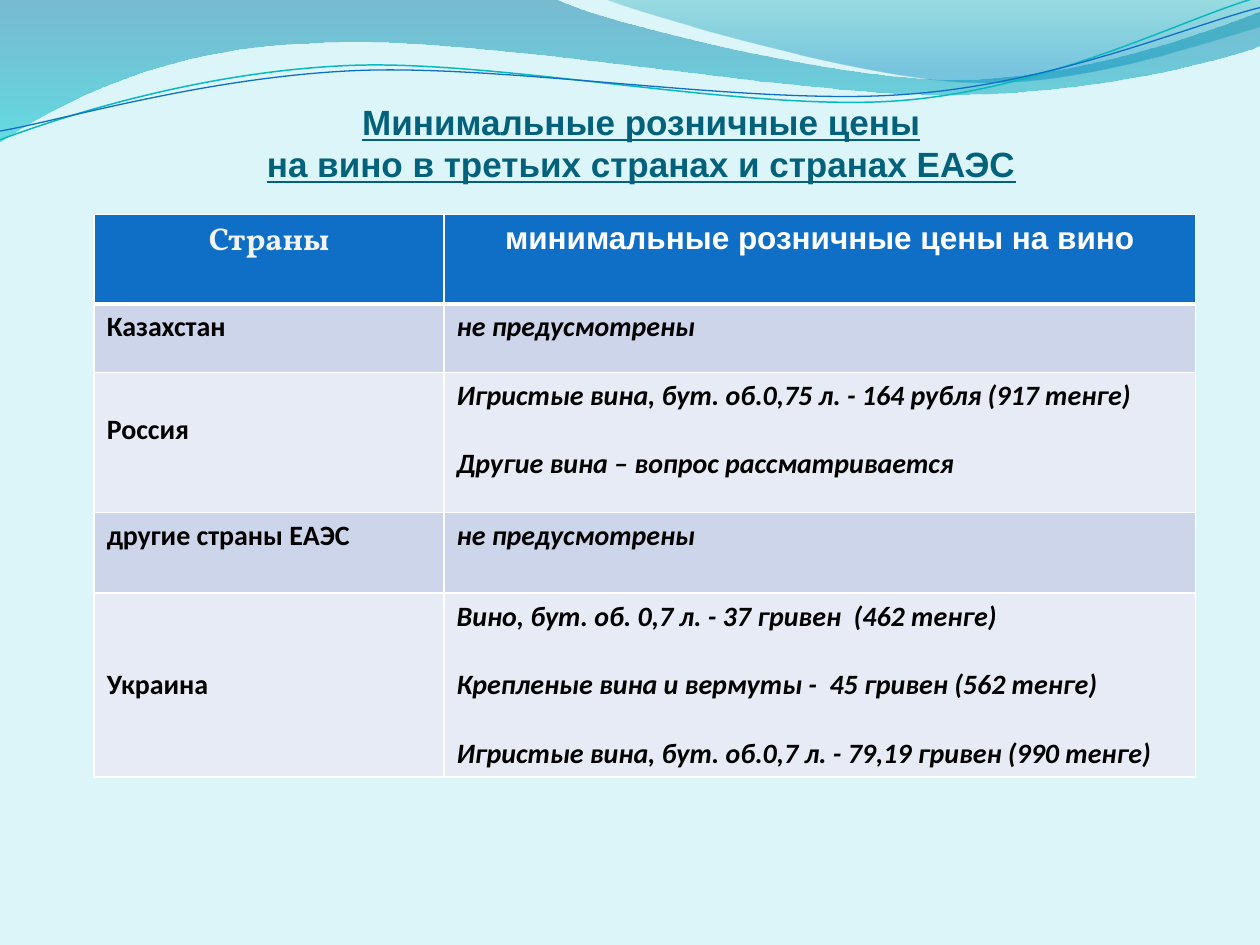
import math
import pptx
import pptx.util
import pptx.dml.color
import pptx.enum.text
import pptx.oxml
import pptx.oxml.ns
from dataclasses import dataclass

Pt = pptx.util.Pt
Align = pptx.enum.text.PP_ALIGN
Anchor = pptx.enum.text.MSO_ANCHOR
qn = pptx.oxml.ns.qn
NS = pptx.oxml.ns.nsdecls("a")


@dataclass(frozen=True)
class Theme:
    back: str = "DBF5F9"
    title: str = "04617B"
    head: str = "0F6FC6"
    bands: tuple = ("CCD5EA", "E7EBF5")
    ink: str = "000000"
    white: str = "FFFFFF"
    pale: str = "F2F2F2"
    teal: str = "0AB8BF"
    title_size: int = 20
    head_size: int = 18
    body_size: int = 16
    row_gap: float = 19.55  # one line of body text


def rgb(code):
    return pptx.dml.color.RGBColor.from_string(code)


def pairs(part):
    return list(zip(part[::2], part[1::2]))


def turn(path, mid, angle):
    """Turn every point of a path clockwise about a middle point."""
    cos, sin = math.cos(math.radians(angle)), math.sin(math.radians(angle))
    (cx, cy), out = mid, []
    for part in path:
        spots = [(x - cx, y - cy) for x, y in pairs(part)]
        out.append([num for x, y in spots
                    for num in (cx + x * cos - y * sin, cy + x * sin + y * cos)])
    return out


class Deck:
    def __init__(self, theme):
        self.theme = theme
        self.file = pptx.Presentation()
        self.file.slide_width, self.file.slide_height = Pt(720), Pt(540)
        self.slide = self.file.slides.add_slide(self.file.slide_layouts[5])
        fill = self.slide.background.fill
        fill.solid()
        fill.fore_color.rgb = rgb(theme.back)

    def shape(self, path, close):
        """Draw lines (2 numbers) and cubic curves (6 numbers)."""
        first, *rest = [(Pt(x), Pt(y)) for part in path for x, y in pairs(part)]
        pen = self.slide.shapes.build_freeform(*first, scale=1.0)
        pen.add_line_segments(rest, close=close)
        form = pen.convert_to_shape()
        form.shadow.inherit = False
        # Join each three points of a curve into one cubic segment
        legs = iter(list(form.element.iter(qn("a:lnTo"))))
        for part in path[1:]:
            group = [next(legs) for _ in pairs(part)]
            if len(group) == 3:
                curve = pptx.oxml.parse_xml(f"<a:cubicBezTo {NS}/>")
                group[0].addprevious(curve)
                for leg in group:
                    curve.append(leg[0])
                    leg.getparent().remove(leg)
        return form

    def wave(self, path, stops):
        form = self.shape(path, True)
        form.line.fill.background()
        form.fill.gradient()
        form.fill.gradient_angle = 270
        for stop, (place, tint, _) in zip(form.fill.gradient_stops, stops):
            stop.position = place
            stop.color.rgb = rgb(tint)
        tints = form.element.spPr.iter(qn("a:srgbClr"))
        for node, (_, _, alpha) in zip(tints, stops):
            node.append(pptx.oxml.parse_xml(f'<a:alpha {NS} val="{alpha * 1000}"/>'))

    def curve(self, path, mid, tint, width, tilt=2.7):
        form = self.shape(turn(path, mid, tilt), False)
        form.rotation = 360 - tilt
        form.fill.background()
        form.line.color.rgb = rgb(tint)
        form.line.width = Pt(width)

    def style(self, para, face, size, tint, slant=False):
        font = para.font
        font.name, font.size, font.bold, font.italic = face, Pt(size), True, slant
        font.color.rgb = rgb(tint)

    def title(self, text, box):
        form = self.slide.shapes.title
        form.left, form.top, form.width, form.height = map(Pt, box)
        frame = form.text_frame
        frame.word_wrap = True
        frame.auto_size = pptx.enum.text.MSO_AUTO_SIZE.NONE
        frame.vertical_anchor = Anchor.BOTTOM
        frame.margin_left = frame.margin_right = frame.margin_bottom = 0
        frame.margin_top = Pt(3.6)
        para = frame.paragraphs[0]
        para.text = text
        para.alignment = Align.CENTER
        self.style(para, "Arial", self.theme.title_size, self.theme.title)
        para.font.underline = True

    def border(self, cell, base):
        props = cell._tc.get_or_add_tcPr()
        sides = (("lnL", 1), ("lnR", 1), ("lnT", 1), ("lnB", base))
        for spot, (side, width) in enumerate(sides):
            props.insert(spot, pptx.oxml.parse_xml(
                f'<a:{side} {NS} w="{Pt(width)}"><a:solidFill>'
                f'<a:srgbClr val="{self.theme.white}"/></a:solidFill></a:{side}>'))

    def cell(self, cell, lines, fill, base=1):
        """Fill one cell and return its paragraphs."""
        cell.fill.solid()
        cell.fill.fore_color.rgb = rgb(fill)
        self.border(cell, base)
        frame = cell.text_frame
        for spot, line in enumerate(lines):
            para = frame.add_paragraph() if spot else frame.paragraphs[0]
            para.text = line
            if spot:
                para.space_before = Pt(self.theme.row_gap)
        return frame.paragraphs

    def table(self, heads, rows, spot, widths, heights):
        look = self.theme
        grid = self.slide.shapes.add_table(
            len(heights), len(widths), *map(Pt, spot),
            Pt(sum(widths)), Pt(sum(heights))).table
        for col, width in zip(grid.columns, widths):
            col.width = Pt(width)
        for row, height in zip(grid.rows, heights):
            row.height = Pt(height)
        # Header row
        for col, (text, face, tint) in enumerate(heads):
            para = self.cell(grid.cell(0, col), [text], look.head, 3)[0]
            para.alignment = Align.CENTER
            self.style(para, face, look.head_size, tint)
        # Banded body rows
        for row, texts in enumerate(rows, 1):
            fill = look.bands[(row - 1) % 2]
            for col, lines in enumerate(texts):
                for para in self.cell(grid.cell(row, col), lines, fill):
                    self.style(para, "Calibri", look.body_size, look.ink, col == 1)
        return grid


def inch(path):
    return [[72 * num for num in part] for part in path]


def main():
    theme = Theme()
    deck = Deck(theme)

    # Waves along the top
    deck.wave(inch([
        (0, 0), (4.4, -0.01), (4.76, 0.17, 6.64, 0.63, 7.58, 0.63),
        (8.53, 0.63, 9.58, 0.26, 10, 0.09), (10.01, 0.36),
        (9.83, 0.44, 8.7, 0.76, 7.46, 0.75), (6.22, 0.75, 3.82, 0.28, 2.57, 0.34),
        (1.29, 0.36, 0.46, 0.83, -0.01, 1.13), (0, 0)]),
        [(0, "0074A1", 45), (1, "00C6CF", 55)])
    deck.wave(inch([
        (4.79, -0.01), (5.09, 0.11, 6.82, 0.62, 7.69, 0.65),
        (8.56, 0.69, 9.61, 0.32, 10, 0.21), (10, 0), (4.79, -0.01)]),
        [(0, "00A1A9", 30), (0.8, "008BBF", 45)])
    deck.curve(inch([
        (0, 1.11), (0.48, 0.93, 1.58, 0.57, 2.77, 0.52),
        (3.95, 0.47, 5.93, 0.89, 7.13, 0.8), (8.33, 0.71, 9.38, 0.15, 9.98, -0.02)]),
        (359.3, 41.4), theme.teal, 0.85)
    deck.curve(inch([
        (0, 1.04), (0.47, 0.96, 1.64, 0.61, 2.83, 0.56),
        (4.03, 0.51, 5.97, 0.84, 7.17, 0.75), (8.36, 0.67, 9.41, 0.21, 10, 0.06)]),
        (359.6, 42.5), theme.head, 0.75)

    # Title
    deck.title("Минимальные розничные цены\vна вино в третьих странах и странах ЕАЭС",
               (42.5, 54.7, 648, 51))

    # Price table
    none = ["не предусмотрены"]
    grid = deck.table(
        [("Страны", "Vollkorn", theme.pale),
         ("минимальные розничные цены на вино", "Arial", theme.white)],
        [(["Казахстан"], none),
         (["Россия"], ["Игристые вина, бут. об.0,75 л. - 164 рубля (917 тенге)",
                       "Другие вина – вопрос рассматривается"]),
         (["другие страны ЕАЭС"], none),
         (["Украина"], ["Вино, бут. об. 0,7 л. - 37 гривен  (462 тенге)",
                        "Крепленые вина и вермуты -  45 гривен (562 тенге)",
                        "Игристые вина, бут. об.0,7 л. - 79,19 гривен (990 тенге)"])],
        (53.8, 122.5), (200, 429.4), (51.2, 39.2, 79.9, 46.2, 105.2))
    grid.cell(2, 0).margin_top = Pt(3.6 + theme.row_gap)
    grid.cell(4, 0).vertical_anchor = Anchor.MIDDLE

    deck.file.save("out.pptx")


if __name__ == "__main__":
    main()
